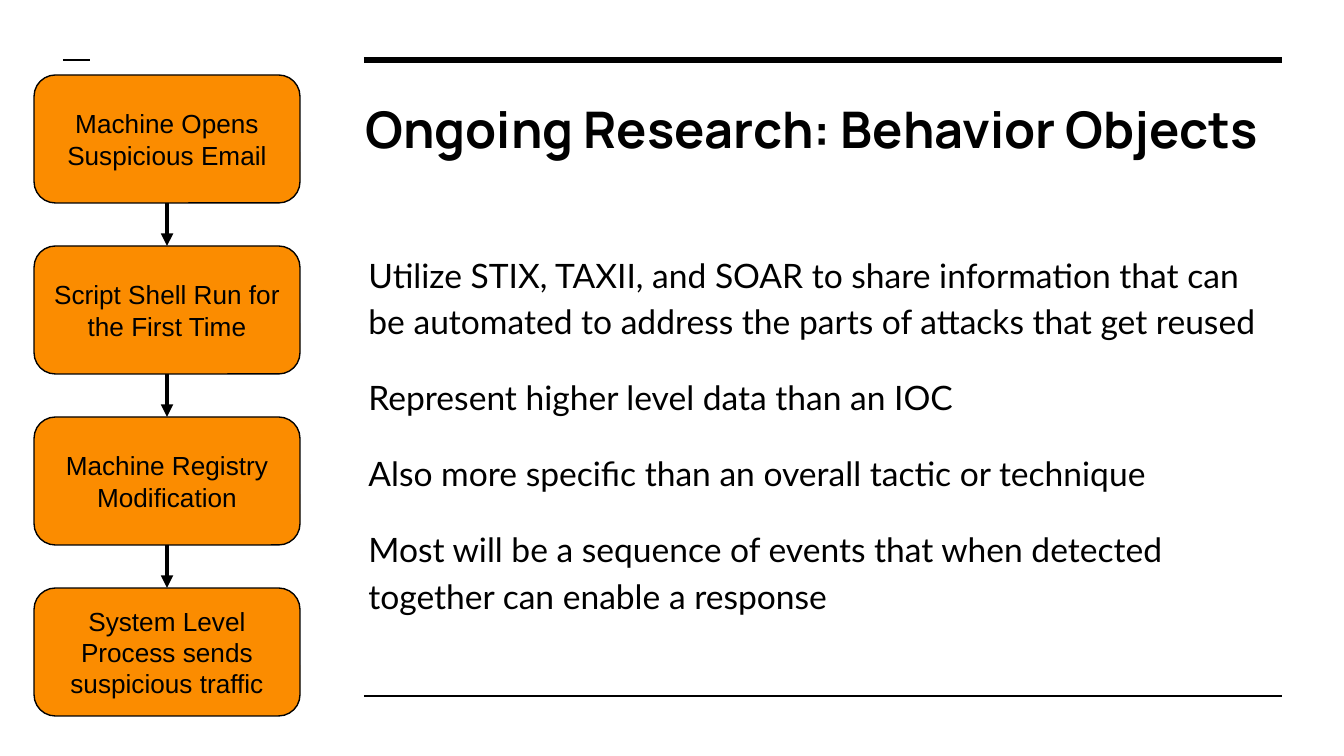
"""Build the behavior objects slide: an attack sequence beside its explanation."""
from dataclasses import dataclass

from lxml import etree
from pptx import Presentation, util as u
from pptx.dml.color import RGBColor
from pptx.enum import shapes, text
from pptx.oxml import ns

EMU_PER_PX = 914400 / 134.4


@dataclass(frozen=True)
class Theme:
    """Colours, fonts and type sizes of the slide."""
    ink: str = "000000"
    step_fill: str = "FB8C00"
    title_font: str = "Manrope"
    body_font: str = "Lato"
    step_font: str = "Arial"
    title_size: int = 27
    body_size: int = 18
    step_size: int = 14


THEME = Theme()

HEADING = "Ongoing Research: Behavior Objects"
POINTS = [
    "Utilize STIX, TAXII, and SOAR to share information that can be automated "
    "to address the parts of attacks that get reused",
    "Represent higher level data than an IOC",
    "Also more specific than an overall tactic or technique",
    "Most will be a sequence of events that when detected together can enable a response",
]
STEPS = [
    "Machine Opens Suspicious Email",
    "Script Shell Run for the First Time",
    "Machine Registry Modification",
    "System Level Process sends suspicious traffic",
]
RULES = [(364, 60, 1282, 3), (364, 696, 1282, 1.5), (63, 60, 90, 1.5)]
STEP_LEFT, STEP_TOP, STEP_WIDTH, STEP_HEIGHT, STEP_PITCH = 34, 75, 266, 128, 171


def px(length):
    """Turn pixels into EMU."""
    return u.Emu(round(length * EMU_PER_PX))


def colour(code):
    """Turn a hex code into a colour."""
    return RGBColor.from_string(code)


def style_runs(paragraph, font, size, bold=False):
    """Give every run of a paragraph its type."""
    for run in paragraph.runs:
        run.font.name = font
        run.font.size = u.Pt(size)
        run.font.bold = bold
        run.font.color.rgb = colour(THEME.ink)


def set_frame(frame, anchor):
    """Set insets, wrapping and anchor of a text frame."""
    frame.auto_size = text.MSO_AUTO_SIZE.NONE
    frame.word_wrap = True
    frame.vertical_anchor = anchor
    frame.margin_left = frame.margin_right = u.Inches(0.1)
    frame.margin_top = frame.margin_bottom = u.Inches(0.1)


def place(holder, left, top, width, height):
    """Move a placeholder and start its text at the top."""
    holder.left, holder.top = px(left), px(top)
    holder.width, holder.height = px(width), px(height)
    set_frame(holder.text_frame, text.MSO_ANCHOR.TOP)


def add_heading(slide):
    """Fill the title placeholder."""
    heading = slide.shapes.title
    place(heading, 352, 85, 929, 93)
    heading.text_frame.text = HEADING
    paragraph = heading.text_frame.paragraphs[0]
    paragraph.alignment = text.PP_ALIGN.LEFT
    style_runs(paragraph, THEME.title_font, THEME.title_size, bold=True)


def add_points(slide):
    """Fill the body placeholder with unbulleted paragraphs."""
    body = slide.placeholders[1]
    place(body, 355, 235, 929, 441)
    frame = body.text_frame
    frame.text = "\n".join(POINTS)
    for index, paragraph in enumerate(frame.paragraphs):
        paragraph.alignment = text.PP_ALIGN.LEFT
        paragraph.line_spacing = 1.15
        paragraph.space_before = u.Pt(16 if index else 0)
        paragraph.space_after = u.Pt(16 if index == len(POINTS) - 1 else 0)
        properties = paragraph._p.get_or_add_pPr()
        properties.set("marL", "0")
        properties.set("indent", "0")
        etree.SubElement(properties, ns.qn("a:buNone"))
        style_runs(paragraph, THEME.body_font, THEME.body_size)


def add_line(slide, start, end, weight, arrow=False):
    """Draw a straight line, with an arrowhead at its end if asked."""
    line = slide.shapes.add_connector(
        shapes.MSO_CONNECTOR.STRAIGHT, *map(px, start + end))
    line.line.color.rgb = colour(THEME.ink)
    line.line.width = u.Pt(weight)
    if arrow:
        etree.SubElement(line.line._get_or_add_ln(), ns.qn("a:tailEnd"), type="triangle")
    etree.SubElement(line._element.spPr, ns.qn("a:effectLst"))
    return line


def add_step(slide, label, top):
    """Draw one rounded step of the attack sequence."""
    step = slide.shapes.add_shape(
        shapes.MSO_SHAPE.ROUNDED_RECTANGLE,
        px(STEP_LEFT), px(top), px(STEP_WIDTH), px(STEP_HEIGHT))
    step.shadow.inherit = False
    step.fill.solid()
    step.fill.fore_color.rgb = colour(THEME.step_fill)
    step.line.color.rgb = colour(THEME.ink)
    step.line.width = u.Pt(0.75)
    set_frame(step.text_frame, text.MSO_ANCHOR.MIDDLE)
    step.text_frame.text = label
    paragraph = step.text_frame.paragraphs[0]
    paragraph.alignment = text.PP_ALIGN.CENTER
    style_runs(paragraph, THEME.step_font, THEME.step_size)


def add_sequence(slide):
    """Stack the steps and join each to the next."""
    tops = [STEP_TOP + index * STEP_PITCH for index in range(len(STEPS))]
    for label, top in zip(STEPS, tops):
        add_step(slide, label, top)
    middle = STEP_LEFT + STEP_WIDTH // 2
    for top, next_top in zip(tops, tops[1:]):
        add_line(slide, (middle, top + STEP_HEIGHT), (middle, next_top), 2.25, arrow=True)


def main():
    """Build and save the slide."""
    deck = Presentation()
    deck.slide_width, deck.slide_height = px(1344), px(756)
    slide = deck.slides.add_slide(deck.slide_layouts[1])
    for left, level, right, weight in RULES:
        add_line(slide, (left, level), (right, level), weight)
    add_heading(slide)
    add_points(slide)
    add_sequence(slide)
    deck.save("out.pptx")


if __name__ == "__main__":
    main()
